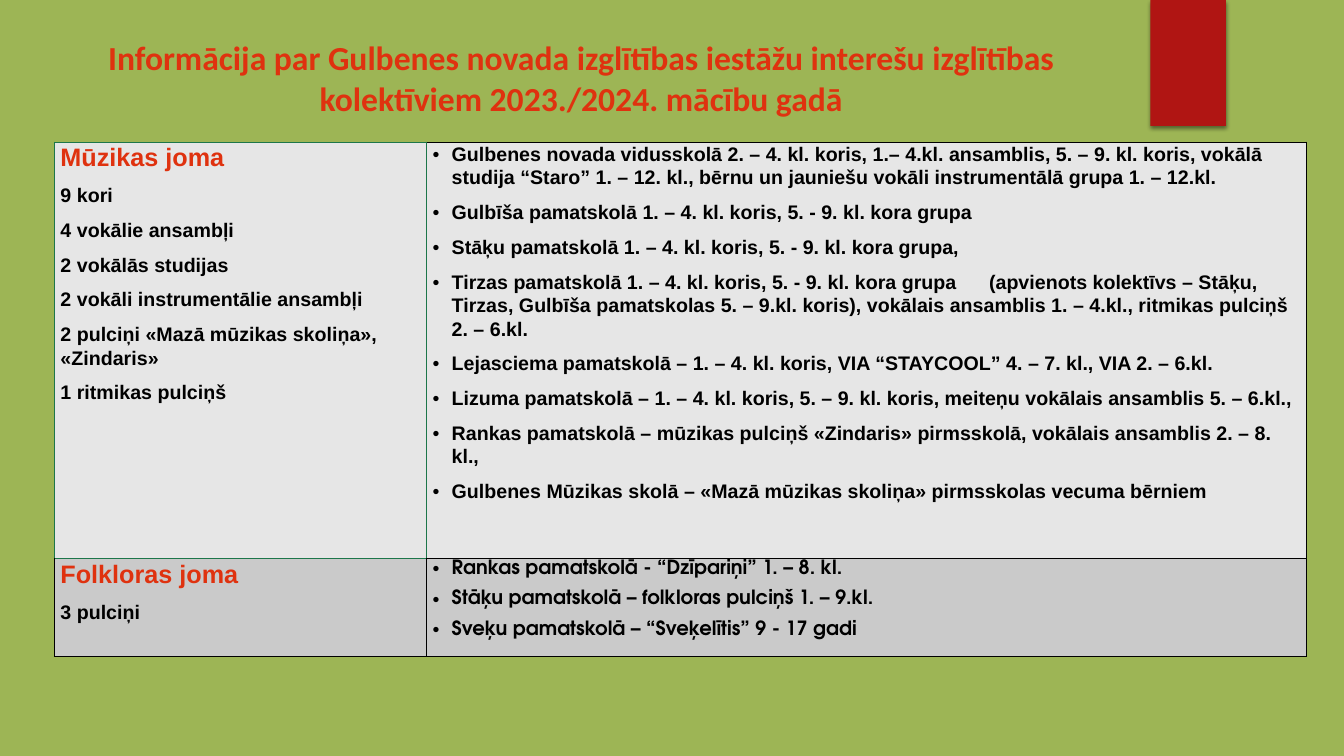
from dataclasses import dataclass
from typing import Any

from lxml import etree
from pptx import Presentation, util as u
from pptx.dml.color import RGBColor
from pptx.enum import shapes, text
from pptx.oxml import ns

COLORS = {"page": "9DB555", "flag": "B01513", "head": "DF320F", "ink": "000000",
          "green": "1D764A", "light": "E6E6E6", "grey": "CACACA"}


@dataclass(frozen=True)
class Line:
    words: str
    size: int = 14
    color: str = "ink"
    font: str = "Arial"
    bullet: bool = False


@dataclass(frozen=True)
class Box:
    """A table cell; edges are the colours of its left, right, top and bottom."""
    lines: list[Line]
    fill: str
    edges: tuple[str, str, str, str]


def field(name: str, plain: list[str]) -> list[Line]:
    return [Line(name, 18, "head")] + [Line(words) for words in plain]


def points(items: list[str], font: str = "Arial") -> list[Line]:
    return [Line(words, font=font, bullet=True) for words in items]


TITLE = Line("Informācija par Gulbenes novada izglītības iestāžu interešu izglītības "
             "kolektīviem 2023./2024. mācību gadā", 24, "head", "Calibri")
MUSIC = field("Mūzikas joma", [
    "9 kori", "4 vokālie ansambļi", "2 vokālās studijas",
    "2 vokāli instrumentālie ansambļi",
    "2 pulciņi «Mazā mūzikas skoliņa», «Zindaris»", "1 ritmikas pulciņš"])
CHOIRS = points([
    "Gulbenes novada vidusskolā 2. – 4. kl. koris, 1.– 4.kl. ansamblis, 5. – 9. kl. koris, "
    "vokālā studija “Staro” 1. – 12. kl., bērnu un jauniešu vokāli instrumentālā grupa "
    "1. – 12.kl.",
    "Gulbīša pamatskolā 1. – 4. kl. koris, 5. - 9. kl. kora grupa",
    "Stāķu pamatskolā 1. – 4. kl. koris, 5. - 9. kl. kora grupa,",
    "Tirzas pamatskolā 1. – 4. kl. koris, 5. - 9. kl. kora grupa\t(apvienots kolektīvs – "
    "Stāķu, Tirzas, Gulbīša pamatskolas 5. – 9.kl. koris), vokālais ansamblis 1. – 4.kl., "
    "ritmikas pulciņš 2. – 6.kl.",
    "Lejasciema pamatskolā – 1. – 4. kl. koris, VIA “STAYCOOL” 4. – 7. kl., VIA 2. – 6.kl.",
    "Lizuma pamatskolā – 1. – 4. kl. koris, 5. – 9. kl. koris, meiteņu vokālais ansamblis "
    "5. – 6.kl.,",
    "Rankas pamatskolā – mūzikas pulciņš «Zindaris» pirmsskolā, vokālais ansamblis "
    "2. – 8. kl.,",
    "Gulbenes Mūzikas skolā – «Mazā mūzikas skoliņa» pirmsskolas vecuma bērniem"])
FOLK = field("Folkloras joma", ["3 pulciņi"])
CLUBS = points([
    "Rankas pamatskolā - “Dzīpariņi” 1. – 8. kl.",
    "Stāķu pamatskolā – folkloras pulciņš 1. – 9.kl.",
    "Sveķu pamatskolā – “Sveķelītis” 9 - 17 gadi"], "TeX Gyre Adventor")
GRID = [
    [Box(MUSIC, "light", ("green",) * 4),
     Box(CHOIRS, "light", ("green", "ink", "ink", "ink"))],
    [Box(FOLK, "grey", ("ink", "ink", "green", "ink")),
     Box(CLUBS, "grey", ("ink",) * 4)],
]
WIDTHS, HEIGHTS = (3.69, 8.73), (4.13, 0.94)


def rgb(name: str) -> RGBColor:
    return RGBColor.from_string(COLORS[name])


def apply(target: Any, values: dict[str, Any]) -> None:
    for key, value in values.items():
        setattr(target, key, value)


def node(parent: Any, tag: str, **attrs: Any) -> Any:
    return etree.SubElement(parent, ns.qn(tag), {k: str(v) for k, v in attrs.items()})


def tint(parent: Any, name: str) -> Any:
    return node(parent, "a:srgbClr", val=COLORS[name])


def dot(para: Any, line: Line) -> None:
    """Add a hanging bullet, and a tab stop where the text has a tab."""
    props = para._p.get_or_add_pPr()
    hang = u.Inches(0.19)
    props.set("marL", str(hang))
    props.set("indent", str(-hang))
    tint(node(props, "a:buClr"), "ink")
    node(props, "a:buFont", typeface="Arial")
    node(props, "a:buChar", char="•")
    if "\t" in line.words:
        node(node(props, "a:tabLst"), "a:tab", pos=u.Inches(5.52), algn="l")


def write(frame: Any, lines: list[Line], **style: Any) -> None:
    for i, line in enumerate(lines):
        para = frame.paragraphs[0] if i == 0 else frame.add_paragraph()
        if line.bullet:
            dot(para, line)
        apply(para, style)
        if i:
            para.space_before = u.Pt(8)
        run = para.add_run()
        run.text = line.words
        apply(run.font, {"size": u.Pt(line.size), "name": line.font, "bold": True})
        run.font.color.rgb = rgb(line.color)


def paint(shape: Any, name: str) -> None:
    shape.fill.solid()
    shape.fill.fore_color.rgb = rgb(name)


def edge(cell: Any, names: tuple[str, str, str, str]) -> None:
    props = cell._tc.get_or_add_tcPr()
    for i, (side, name) in enumerate(zip("LRTB", names)):
        rule = node(props, f"a:ln{side}", w=u.Pt(1))
        tint(node(rule, "a:solidFill"), name)
        props.insert(i, rule)


def flag(slide: Any) -> None:
    shape = slide.shapes.add_shape(shapes.MSO_SHAPE.RECTANGLE, u.Inches(11.41), 0,
                                   u.Inches(0.75), u.Inches(1.25))
    paint(shape, "flag")
    shape.line.fill.background()
    shape.shadow.inherit = False
    effects = shape._element.spPr.find(ns.qn("a:effectLst"))
    shade = node(effects, "a:outerShdw", blurRad=u.Pt(3), dist=u.Pt(2),
                 dir=90 * 60000, rotWithShape=0)
    node(tint(shade, "ink"), "a:alpha", val=45000)


def title(slide: Any) -> None:
    frame = slide.shapes.add_textbox(u.Inches(0.62), u.Inches(0.32), u.Inches(10.29),
                                     u.Inches(1.09)).text_frame
    apply(frame, {"word_wrap": True, "vertical_anchor": text.MSO_ANCHOR.TOP})
    write(frame, [TITLE], alignment=text.PP_ALIGN.CENTER)


def table(slide: Any) -> None:
    grid = slide.shapes.add_table(2, 2, u.Inches(0.54), u.Inches(1.41),
                                  u.Inches(sum(WIDTHS)), u.Inches(sum(HEIGHTS))).table
    apply(grid, {"first_row": False, "horz_banding": False})
    for col, width in zip(grid.columns, WIDTHS):
        col.width = u.Inches(width)
    for r, row in enumerate(GRID):
        grid.rows[r].height = u.Inches(HEIGHTS[r])
        for c, box in enumerate(row):
            cell = grid.cell(r, c)
            apply(cell, {"margin_left": u.Inches(0.06), "margin_right": u.Inches(0.06),
                         "margin_top": 0, "margin_bottom": 0})
            paint(cell, box.fill)
            edge(cell, box.edges)
            write(cell.text_frame, box.lines, line_spacing=1.07)


def main() -> None:
    deck = Presentation()
    apply(deck, {"slide_width": u.Inches(13.33), "slide_height": u.Inches(7.5)})
    slide = deck.slides.add_slide(deck.slide_layouts[6])
    paint(slide.background, "page")
    flag(slide)
    title(slide)
    table(slide)
    deck.save("out.pptx")


if __name__ == "__main__":
    main()
